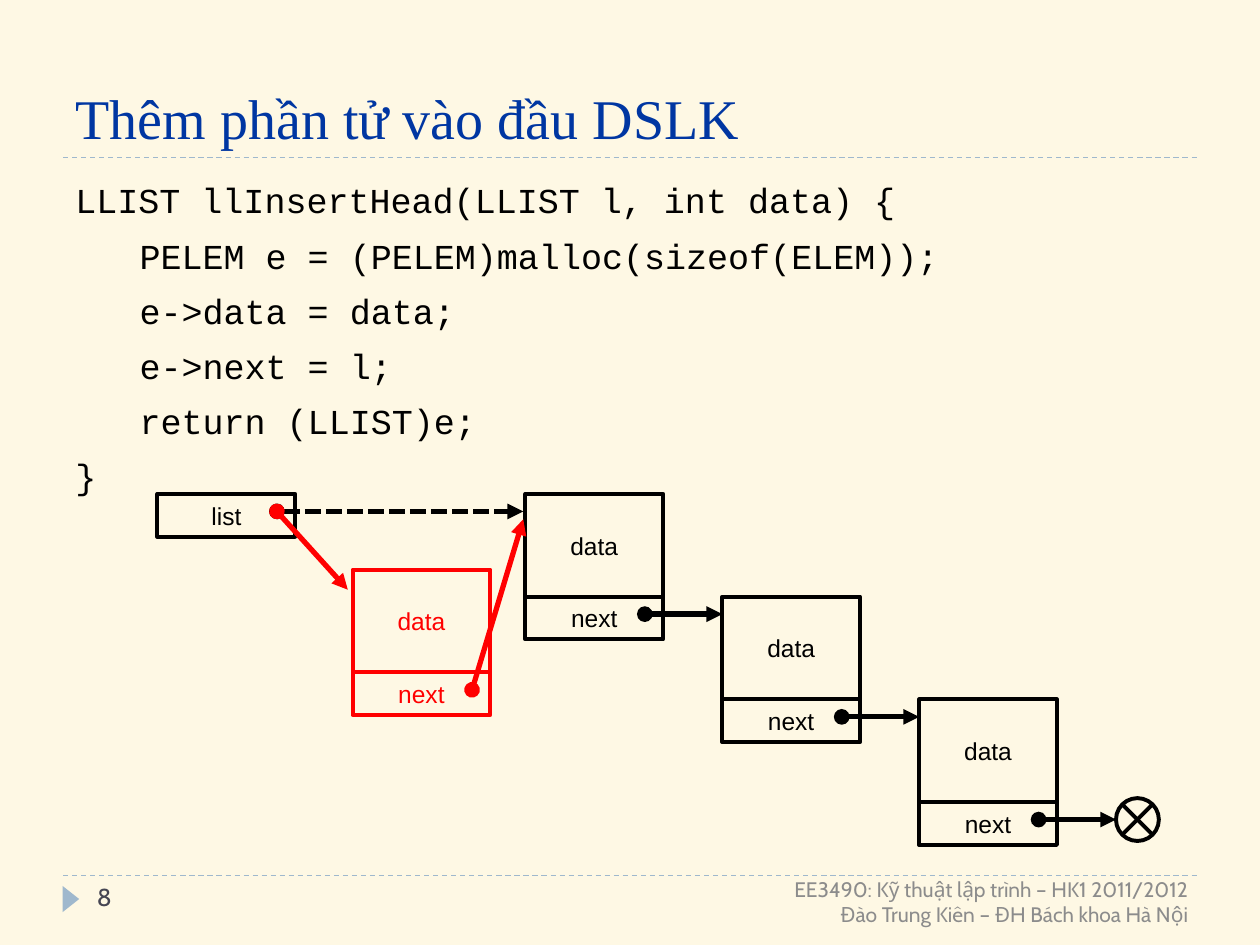
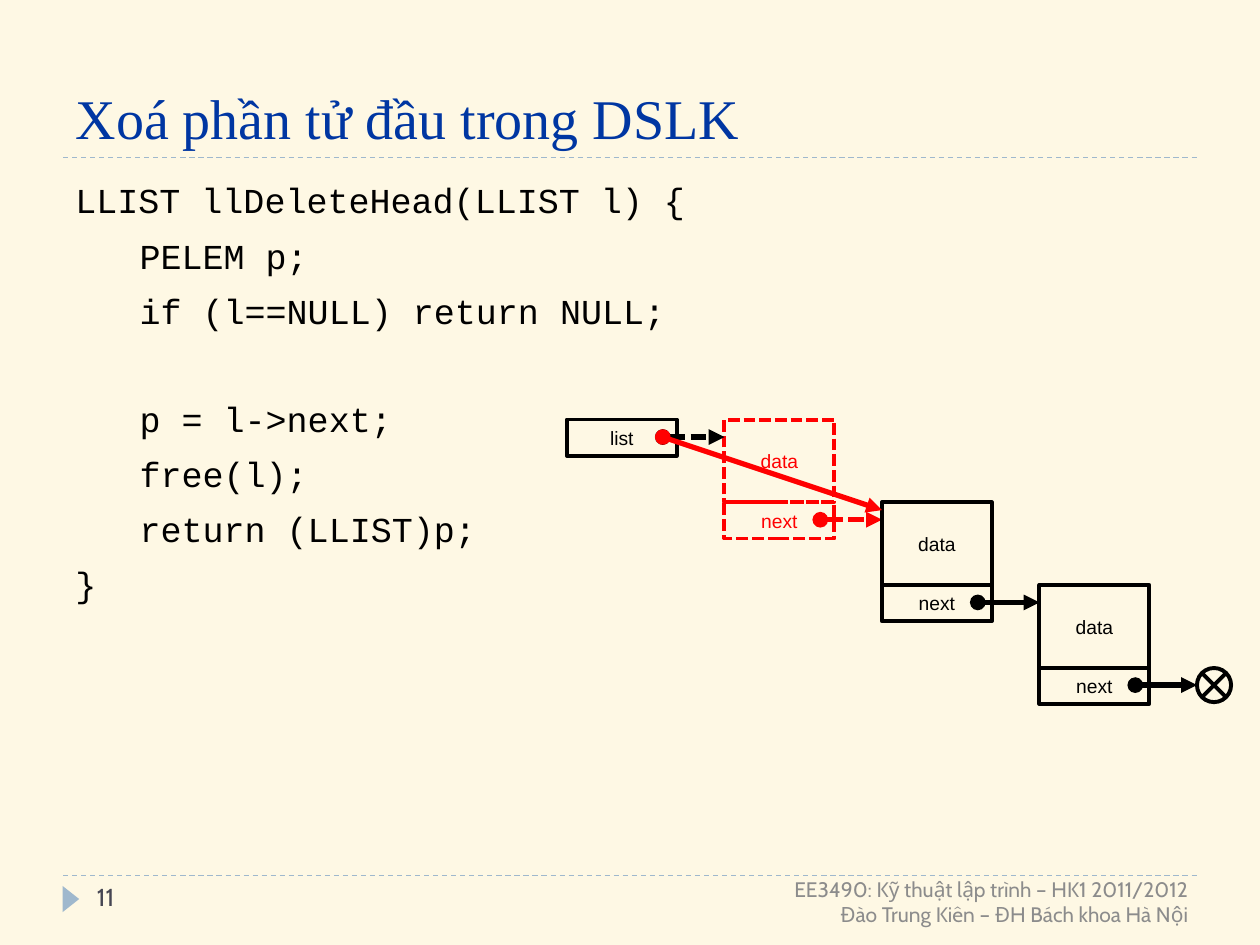
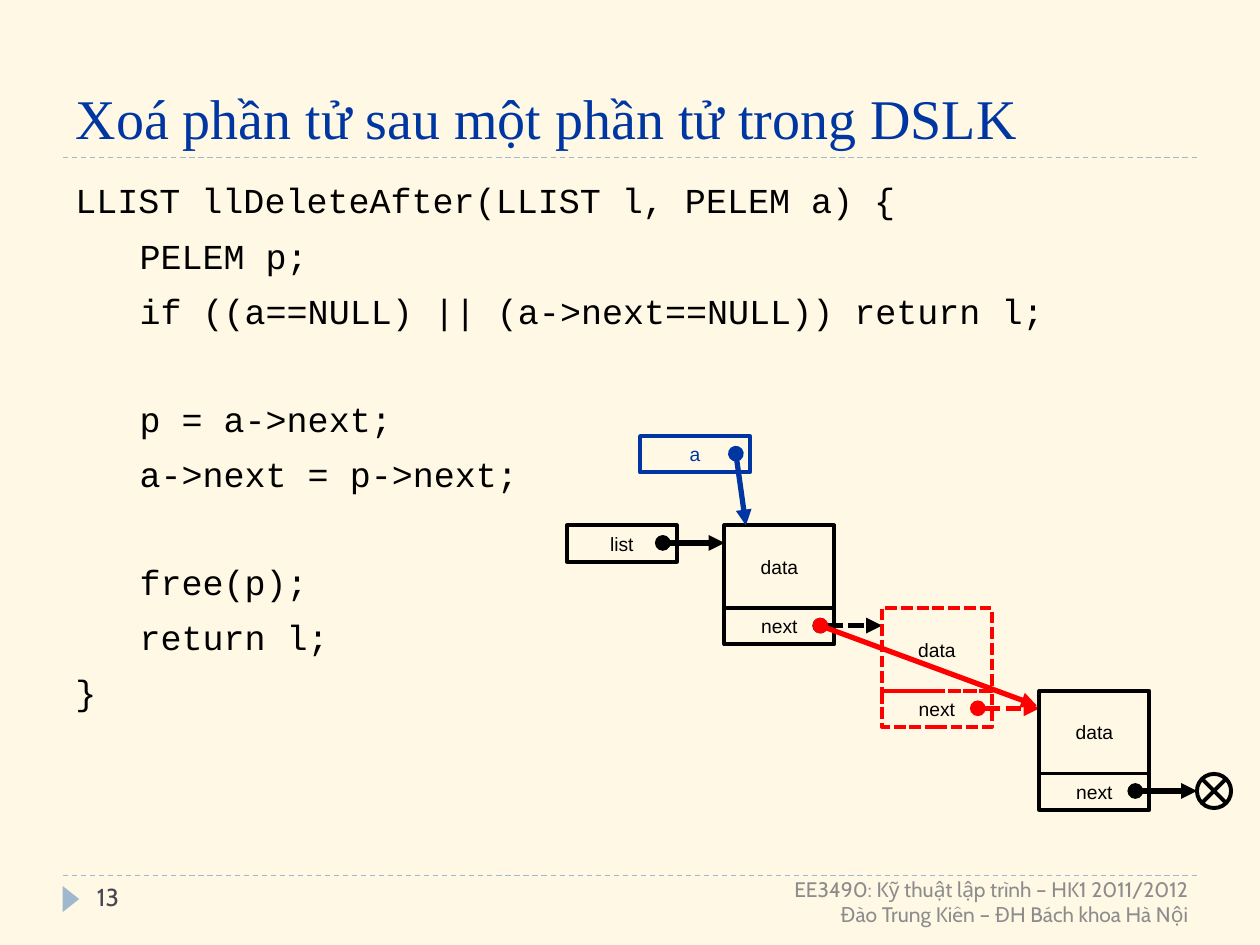
"""Build three slides on inserting into and deleting from a linked list."""
import collections

import lxml.etree
import pptx
import pptx.dml.color
import pptx.enum.dml
import pptx.enum.shapes
import pptx.enum.text
import pptx.oxml.ns
import pptx.util

Pt = pptx.util.Pt
SHAPE = pptx.enum.shapes.MSO_SHAPE
ALIGN = pptx.enum.text.PP_ALIGN
ANCHOR = pptx.enum.text.MSO_ANCHOR
DASH = pptx.enum.dml.MSO_LINE.DASH
SHORT_DASH = pptx.enum.dml.MSO_LINE.SQUARE_DOT

BLACK, RED, BLUE = "000000", "FF0000", "0036A2"
CREAM, PALE_BLUE, SLATE, GRAY = "FEF8E4", "9FB8CD", "464653", "8C8C8C"
FOOTER = "EE3490: Kỹ thuật lập trình – HK1 2011/2012\nĐào Trung Kiên – ĐH Bách khoa Hà Nội"
LINE_PITCH, LINE_GAP = 30.16, 7.5
CODE_INDENT = 36.72
LINK_DROP = 10

Grid = collections.namedtuple("Grid", "width data_h cell_h port step ground size")
LARGE = Grid(78.75, 58.7, 24.5, 68.25, 112.5, 24.5, 14)
SMALL = Grid(62.75, 47.25, 20.75, 54.75, 90, 19.5, 11)


def rgb(color):
    """Turn a hex string into a colour."""
    return pptx.dml.color.RGBColor.from_string(color)


class Deck:
    """Hold the shared style and the current slide."""

    def __init__(self):
        """Start an empty deck with the shared background."""
        self.prs = pptx.Presentation()
        self.prs.slide_width, self.prs.slide_height = Pt(720), Pt(540)
        fill = self.prs.slide_master.background.fill
        fill.solid()
        fill.fore_color.rgb = rgb(CREAM)

    def slide(self, title, number, grid):
        """Add a slide with its title, rules and footer."""
        self.s = self.prs.slides.add_slide(self.prs.slide_layouts[5])
        self.grid = grid
        sp = self.s.shapes.title
        sp.left, sp.top, sp.width, sp.height = Pt(36), Pt(12), Pt(648), Pt(78)
        self.set_text(sp, title, "Times New Roman", 32, BLUE, anchor=ANCHOR.BOTTOM)
        for y in (90, 500.5):
            self.line((36, y), (684, y), PALE_BLUE, 0.75, DASH)
        sp = self.shape(SHAPE.ISOSCELES_TRIANGLE, 33, 509, 15, 9.5)
        sp.rotation = 90
        sp.fill.solid()
        sp.fill.fore_color.rgb = rgb(PALE_BLUE)
        self.text(str(number), 48.25, 500.5, 156, 29, "Cabin", 14, SLATE)
        self.text(FOOTER, 246.25, 500.5, 440, 29, "Cabin", 12, GRAY,
                  ALIGN.RIGHT, ANCHOR.MIDDLE)

    def set_text(self, sp, text, font, size, color, align=ALIGN.LEFT, anchor=ANCHOR.TOP):
        """Fill a shape with text in one format."""
        tf = sp.text_frame
        tf.text = text
        tf.word_wrap = True
        tf.auto_size = pptx.enum.text.MSO_AUTO_SIZE.NONE
        tf.vertical_anchor = anchor
        for p in tf.paragraphs:
            p.alignment = align
            for r in p.runs:
                r.font.name, r.font.size = font, Pt(size)
                r.font.color.rgb = rgb(color)
        return tf

    def text(self, text, x, y, w, h, *style):
        """Add a text box."""
        sp = self.s.shapes.add_textbox(Pt(x), Pt(y), Pt(w), Pt(h))
        return self.set_text(sp, text, *style)

    def code(self, source):
        """Add a code listing with its body indented and gaps for empty lines."""
        lines, gaps = [], []
        gap = 0
        for line in source.split("\n"):
            if line:
                lines.append(line)
                gaps.append(gap)
                gap = LINE_GAP
            else:
                gap += LINE_PITCH
        tf = self.text("\n".join(lines), 36, 95.75, 648, 389, "Courier New", 20, BLACK)
        tf.margin_top = Pt(6.5)
        for p, gap in zip(tf.paragraphs, gaps):
            p.space_before = Pt(gap)
        for p in tf.paragraphs[1:-1]:
            pPr = p._p.get_or_add_pPr()
            pPr.set("marL", "0")
            pPr.set("indent", str(Pt(CODE_INDENT)))

    def shape(self, kind, x, y, w, h, color=None, dash=None):
        """Add an unfilled preset shape, outlined if a colour is given."""
        sp = self.s.shapes.add_shape(kind, Pt(x), Pt(y), Pt(w), Pt(h))
        sp.shadow.inherit = False
        sp.fill.background()
        if color:
            sp.line.color.rgb = rgb(color)
            sp.line.width = Pt(2.25)
            sp.line.dash_style = dash
        else:
            sp.line.fill.background()
        return sp

    def line(self, start, end, color, width, dash=None):
        """Add a straight line and return its outline element."""
        sp = self.s.shapes.add_connector(
            pptx.enum.shapes.MSO_CONNECTOR.STRAIGHT, *map(Pt, start + end))
        sp.line.color.rgb = rgb(color)
        sp.line.width = Pt(width)
        sp.line.dash_style = dash
        spPr = sp._element.spPr
        lxml.etree.SubElement(spPr, pptx.oxml.ns.qn("a:effectLst"))
        return spPr.find(pptx.oxml.ns.qn("a:ln"))

    def link(self, start, end, color=BLACK, dash=None):
        """Add a pointer arrow with a round tail."""
        ln = self.line(start, end, color, 3, dash)
        for tag, kind in (("a:headEnd", "oval"), ("a:tailEnd", "triangle")):
            lxml.etree.SubElement(ln, pptx.oxml.ns.qn(tag), type=kind)

    def cell(self, label, x, y, h, color=BLACK, text_color=None, dash=None):
        """Add a labelled memory cell and return its pointer origin."""
        sp = self.shape(SHAPE.RECTANGLE, x, y, self.grid.width, h, color, dash)
        tf = self.set_text(sp, label, "Arial", self.grid.size, text_color or color,
                           ALIGN.CENTER, ANCHOR.MIDDLE)
        tf.margin_top = tf.margin_bottom = 0
        return x + self.grid.port, y + LINK_DROP

    def pointer(self, label, x, y, color=BLACK):
        """Add a pointer variable and return its pointer origin."""
        return self.cell(label, x, y, self.grid.cell_h, color)

    def node(self, x, y, *style):
        """Add a list element and return its pointer origin."""
        self.cell("data", x, y, self.grid.data_h, *style)
        return self.cell("next", x, y + self.grid.data_h, self.grid.cell_h, *style)

    def chain(self, x, y, removed=None, removed_text=RED):
        """Add three linked elements ending in a null mark and return their origins."""
        ports = []
        for i in range(3):
            gone = i == removed
            style = (RED, removed_text, SHORT_DASH) if gone else ()
            port = self.node(x, y, *style)
            x += self.grid.step
            y += self.grid.data_h
            dash = SHORT_DASH if gone or i + 1 == removed else None
            self.link(port, (x, port[1]), RED if gone else BLACK, dash)
            ports.append(port)
        d = self.grid.ground
        self.shape(SHAPE.FLOWCHART_SUMMING_JUNCTION, x, port[1] - d / 2, d, d, BLACK)
        return ports


def main():
    """Build and save the deck."""
    deck = Deck()

    deck.slide("Thêm phần tử vào đầu DSLK", 8, LARGE)
    deck.code("""LLIST llInsertHead(LLIST l, int data) {
PELEM e = (PELEM)malloc(sizeof(ELEM));
e->data = data;
e->next = l;
return (LLIST)e;
}""")
    deck.chain(300.25, 282.25)
    head = deck.pointer("list", 90, 282.25)
    deck.link(head, (299, head[1]), BLACK, SHORT_DASH)
    deck.link(head, (198.75, 337), RED)
    added = deck.node(201.5, 325.5, RED)
    deck.link(added, (299, 296.75), RED)

    deck.slide("Xoá phần tử đầu trong DSLK", 11, SMALL)
    deck.code("""LLIST llDeleteHead(LLIST l) {
PELEM p;
if (l==NULL) return NULL;

p = l->next;
free(l);
return (LLIST)p;
}""")
    deck.chain(414, 239.75, removed=0)
    head = deck.pointer("list", 324, 239.75)
    deck.link(head, (414, head[1]), BLACK, SHORT_DASH)
    deck.link(head, (504, 291.5), RED)

    deck.slide("Xoá phần tử sau một phần tử trong DSLK", 13, SMALL)
    deck.code("""LLIST llDeleteAfter(LLIST l, PELEM a) {
PELEM p;
if ((a==NULL) || (a->next==NULL)) return l;

p = a->next;
a->next = p->next;

free(p);
return l;
}""")
    ports = deck.chain(414, 300.25, removed=1, removed_text=BLACK)
    head = deck.pointer("list", 324, 300.25)
    deck.link(head, (414, head[1]))
    deck.link(deck.pointer("a", 365.75, 249.25, BLUE), (426.25, 300.25), BLUE)
    deck.link(ports[0], (592.5, 403.25), RED)

    deck.prs.save("out.pptx")


if __name__ == "__main__":
    main()
